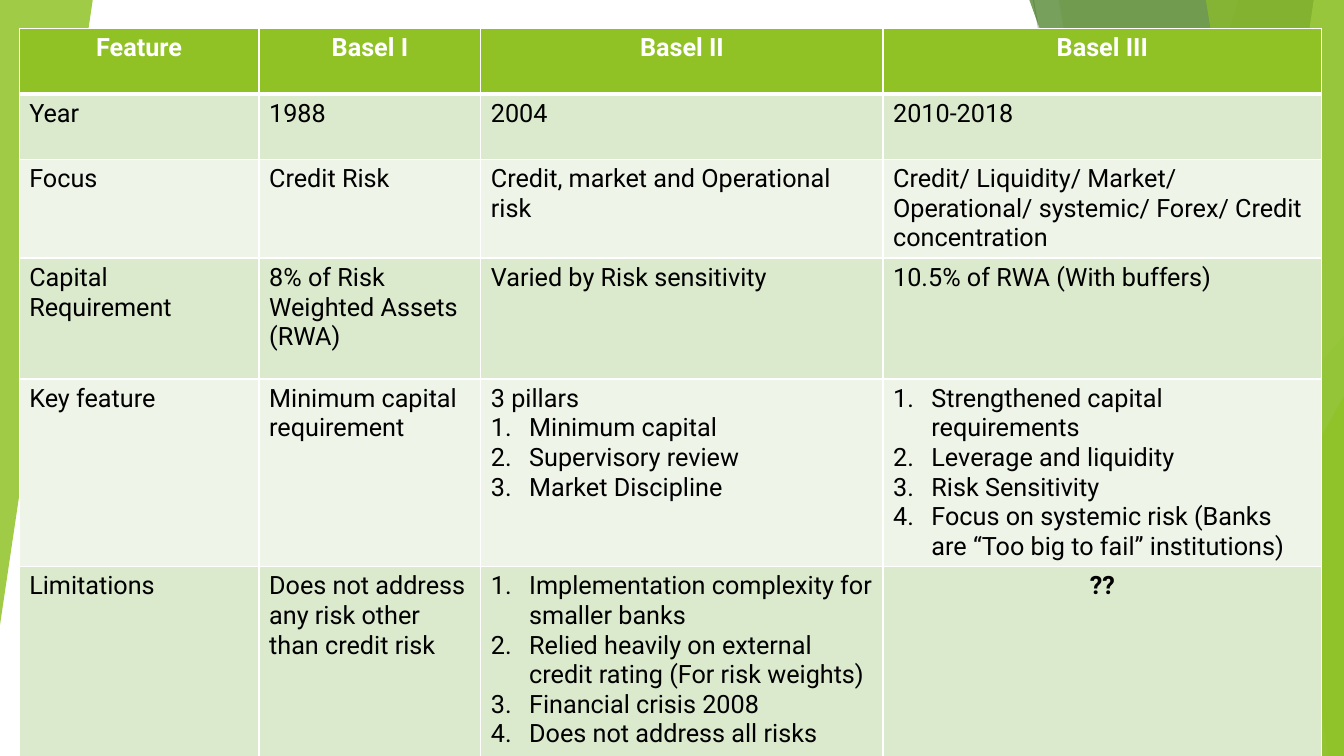
import pptx
import pptx.util
import pptx.dml.color
import pptx.enum.shapes
import pptx.enum.text
import pptx.oxml
import pptx.oxml.ns

WIDE = pptx.util.Inches(13.33)
HIGH = pptx.util.Inches(7.5)
GREEN = "90C226"
WHITE = "FFFFFF"
BANDS = ["EEF4E8", "DBE9CD"]
COLS = [17.85, 16.5, 29.93, 32.63]
ROWS = [8.67, 8.67, 12.27, 16, 15.87, 27.07]
MARK = "#"
CELLS = [
    ["Feature", "Basel I", "Basel II", "Basel III"],
    ["Year", "1988", "2004", "2010-2018"],
    ["Focus", "Credit Risk", "Credit, market and Operational risk",
     "Credit/ Liquidity/ Market/ Operational/ systemic/ Forex/ Credit concentration"],
    ["Capital Requirement", "8% of Risk Weighted Assets (RWA)",
     "Varied by Risk sensitivity", "10.5% of RWA (With buffers)"],
    ["Key feature", "Minimum capital requirement",
     "3 pillars\n#Minimum capital\n#Supervisory review\n#Market Discipline",
     "#Strengthened capital requirements\n#Leverage and liquidity\n#Risk Sensitivity\n"
     "#Focus on systemic risk (Banks are “Too big to fail” institutions)"],
    ["Limitations", "Does not address any risk other than credit risk",
     "#Implementation complexity for smaller banks\n"
     "#Relied heavily on external credit rating (For risk weights)\n"
     "#Financial crisis 2008\n#Does not address all risks", "??"],
]


def across(share):
    return round(WIDE * share / 100)


def down(share):
    return round(HIGH * share / 100)


def paint(color, code):
    color.rgb = pptx.dml.color.RGBColor.from_string(code)


def xml(tag, body="", attrs=""):
    return pptx.oxml.parse_xml(
        f'<a:{tag} {pptx.oxml.ns.nsdecls("a")} {attrs}>{body}</a:{tag}>')


def tint(shape, code, alpha):
    shape.shadow.inherit = False
    shape.line.fill.background()
    shape.fill.solid()
    paint(shape.fill.fore_color, code)
    fill = shape.fill.fore_color._xFill
    fill[0].append(xml("alpha", attrs=f'val="{alpha * 1000}"'))


def add_line(slide, start, end, code):
    line = slide.shapes.add_connector(
        pptx.enum.shapes.MSO_CONNECTOR.STRAIGHT,
        across(start[0]), down(start[1]), across(end[0]), down(end[1]))
    paint(line.line.color, code)
    line.line.width = pptx.util.Pt(0.75)
    line._element.spPr.append(xml("effectLst"))


def add_wedge(slide, top, foot, code, alpha):
    pen = slide.shapes.build_freeform(across(top), 0)
    pen.add_line_segments([(WIDE, 0), (WIDE, HIGH), (across(foot), HIGH)])
    tint(pen.convert_to_shape(), code, alpha)


def add_corner(slide, left, top, width, height, code, alpha, turn=0):
    shape = slide.shapes.add_shape(
        pptx.enum.shapes.MSO_SHAPE.ISOSCELES_TRIANGLE,
        across(left), down(top), across(width), down(height))
    shape.adjustments[0] = 1
    shape.rotation = turn
    tint(shape, code, alpha)


def add_rules(cell, row):
    heavy = {0: "B", 1: "T"}.get(row)
    for side in "LRTB":
        width = pptx.util.Pt(3 if side == heavy else 1)
        cell._tc.get_or_add_tcPr().append(xml(
            f"ln{side}", f'<a:solidFill><a:srgbClr val="{WHITE}"/></a:solidFill>',
            f'w="{width}"'))


def number(para):
    props = para._p.get_or_add_pPr()
    hang = pptx.util.Inches(0.38)
    props.set("marL", str(hang))
    props.set("indent", str(-hang))
    props.append(xml("buFont", attrs='typeface="+mj-lt"'))
    props.append(xml("buAutoNum", attrs='type="arabicPeriod"'))


def fill_cell(cell, text, row):
    head = row == 0
    strong = head or text == "??"
    add_rules(cell, row)
    cell.fill.solid()
    paint(cell.fill.fore_color, GREEN if head else BANDS[row % 2])
    cell.text_frame.text = text.replace(MARK, "")
    for para, part in zip(cell.text_frame.paragraphs, text.split("\n")):
        if part.startswith(MARK):
            number(para)
        if strong:
            para.alignment = pptx.enum.text.PP_ALIGN.CENTER
        font = para.runs[0].font
        font.name = "Roboto"
        font.size = pptx.util.Pt(18)
        font.bold = strong
        paint(font.color, WHITE if head else "000000")


def add_grid(slide):
    table = slide.shapes.add_table(
        len(ROWS), len(COLS), across(1.43), down(3.73),
        across(sum(COLS)), down(sum(ROWS))).table
    for col, share in zip(table.columns, COLS):
        col.width = across(share)
    for row, share in zip(table.rows, ROWS):
        row.height = down(share)
    for row, texts in enumerate(CELLS):
        for col, text in enumerate(texts):
            fill_cell(table.cell(row, col), text, row)


def main():
    deck = pptx.Presentation()
    deck.slide_width = WIDE
    deck.slide_height = HIGH
    slide = deck.slides.add_slide(deck.slide_layouts[6])
    add_line(slide, (76.89, 0), (86.87, 100), "BFBFBF")
    add_line(slide, (100, 53.73), (60.92, 100), "D9D9D9")
    add_wedge(slide, 92.12, 75.32, GREEN, 30)
    add_wedge(slide, 78.77, 88.75, GREEN, 20)
    add_corner(slide, 73.29, 44.4, 26.71, 55.6, "54A021", 72)
    add_wedge(slide, 76.59, 96.85, "3F7819", 70)
    add_wedge(slide, 97.75, 89.42, "C0E474", 70)
    add_wedge(slide, 89.72, 98.87, GREEN, 65)
    add_corner(slide, 85.07, 52.4, 14.93, 47.6, GREEN, 80)
    add_corner(slide, 0, 0, 6.9, 82.67, GREEN, 85, 180)
    add_grid(slide)
    deck.save("out.pptx")


if __name__ == "__main__":
    main()
